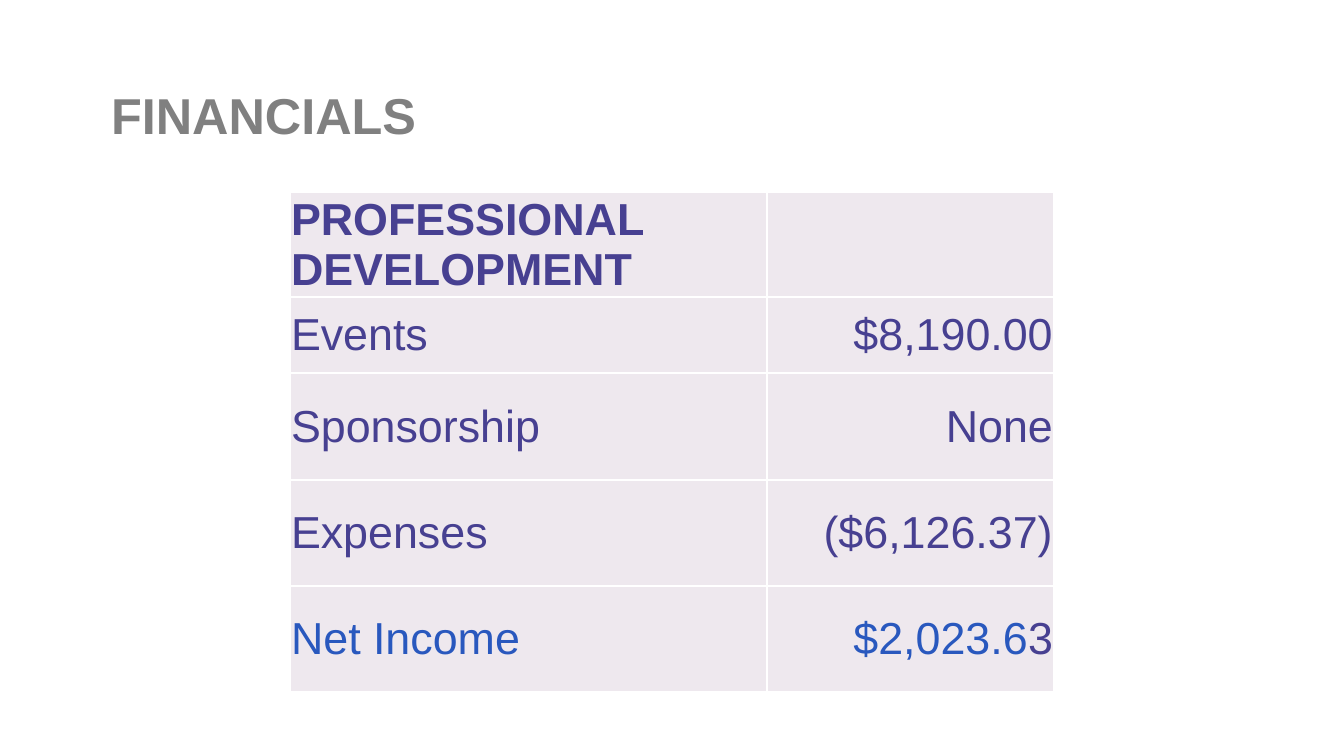
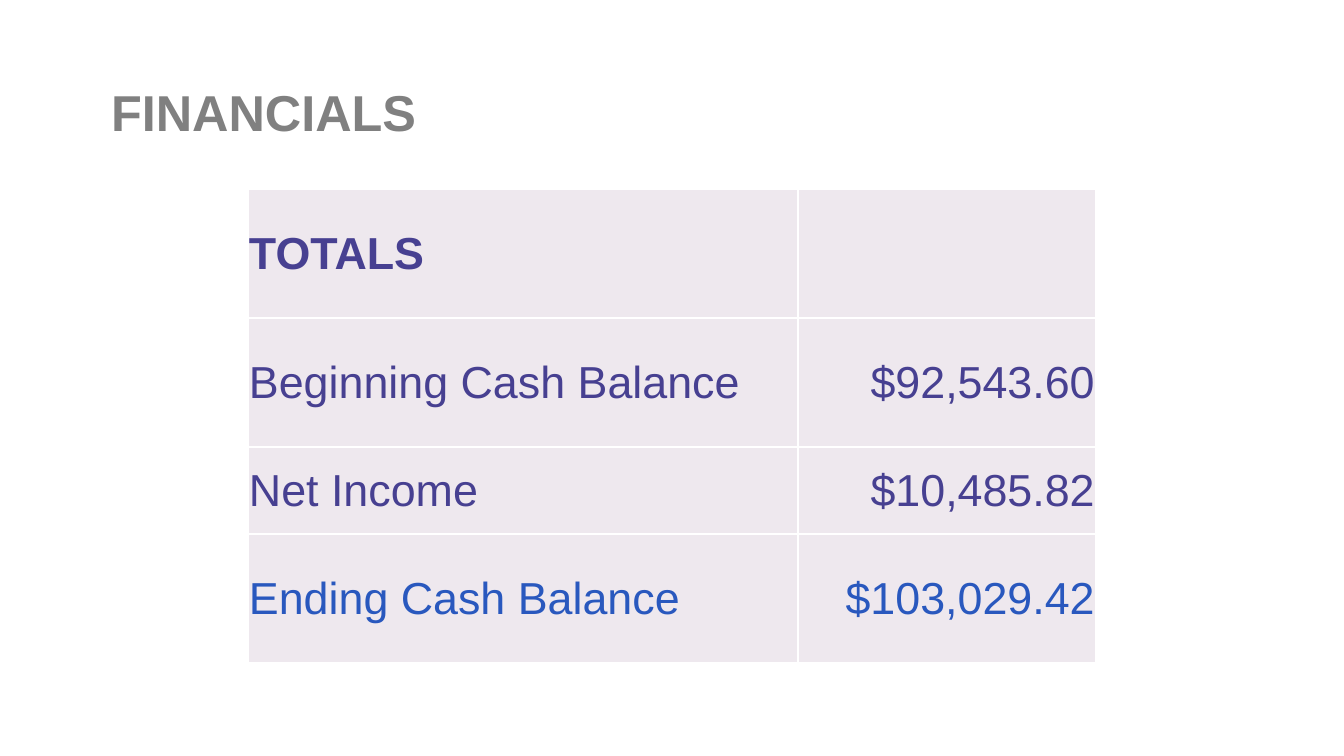
import pptx
import pptx.dml.color
import pptx.enum.text
import pptx.oxml
import pptx.oxml.ns
import pptx.util

# Shared scale, colours and font
PX = 914400 / 100.8
GREY, PLUM, BLUE = "808080", "474091", "2958BE"
PALE, WHITE = "EEE8EE", "FFFFFF"
FONT = "Arial"
ALIGN = pptx.enum.text.PP_ALIGN
MID = pptx.enum.text.MSO_ANCHOR.MIDDLE


def px(num):
    return pptx.util.Emu(round(num * PX))


def add_run(para, text, size, tint, bold=False):
    run = para.add_run()
    run.text = text
    run.font.name = FONT
    run.font.size = pptx.util.Pt(size)
    run.font.bold = bold
    run.font.color.rgb = pptx.dml.color.RGBColor.from_string(tint)


# What differs: title box, table corner, columns, and rows of
# (height, label, label colour, runs of the amount)
pages = [
    {
        "title": (101, 45, 492, 146),
        "corner": (290, 192),
        "cols": (477, 287),
        "rows": [
            (105, "PROFESSIONAL DEVELOPMENT", PLUM, []),
            (76, "Events", PLUM, [("$8,190.00", PLUM)]),
            (107, "Sponsorship", PLUM, [("None", PLUM)]),
            (106, "Expenses", PLUM, [("($6,126.37)", PLUM)]),
            (106, "Net Income", BLUE, [("$2,023.6", BLUE), ("3", PLUM)]),
        ],
    },
    {
        "title": (101, 42, 542, 146),
        "corner": (248, 189),
        "cols": (550, 298),
        "rows": [
            (129, "TOTALS", PLUM, []),
            (129, "Beginning Cash Balance", PLUM, [("$92,543.60", PLUM)]),
            (87, "Net Income", PLUM, [("$10,485.82", PLUM)]),
            (129, "Ending Cash Balance", BLUE, [("$103,029.42", BLUE)]),
        ],
    },
]

deck = pptx.Presentation()
deck.slide_width, deck.slide_height = px(1344), px(756)

for page in pages:
    slide = deck.slides.add_slide(deck.slide_layouts[5])

    # Title
    title = slide.shapes.title
    title.left, title.top, title.width, title.height = map(px, page["title"])
    frame = title.text_frame
    frame.word_wrap = True
    frame.auto_size = pptx.enum.text.MSO_AUTO_SIZE.NONE
    frame.vertical_anchor = MID
    para = frame.paragraphs[0]
    para.alignment = ALIGN.LEFT
    para.line_spacing = 0.9
    add_run(para, "FINANCIALS", 36, GREY, True)

    # Table grid
    rows, cols = page["rows"], page["cols"]
    left, top = page["corner"]
    high = sum(row[0] for row in rows)
    table = slide.shapes.add_table(
        len(rows), len(cols), px(left), px(top), px(sum(cols)), px(high)
    ).table
    table.first_row = table.horz_banding = False
    for col, wide in zip(table.columns, cols):
        col.width = px(wide)

    # Row text: bold head, amounts to the right
    for num, (tall, label, tint, amount) in enumerate(rows):
        table.rows[num].height = px(tall)
        for run in [(label, tint)]:
            add_run(table.cell(num, 0).text_frame.paragraphs[0], *run[:1], 32, run[1], num == 0)
        para = table.cell(num, 1).text_frame.paragraphs[0]
        para.alignment = ALIGN.RIGHT
        for text, shade in amount:
            add_run(para, text, 32, shade)

    # Cell insets, white borders and fill
    for cell in table.iter_cells():
        cell.vertical_anchor = MID
        cell.margin_left = cell.margin_right = cell.margin_top = px(1)
        cell.margin_bottom = 0
        props = cell._tc.get_or_add_tcPr()
        for side in "LRTB":
            props.append(pptx.oxml.parse_xml(
                f'<a:ln{side} {pptx.oxml.ns.nsdecls("a")} w="12700"><a:solidFill>'
                f'<a:srgbClr val="{WHITE}"/></a:solidFill></a:ln{side}>'
            ))
        cell.fill.solid()
        cell.fill.fore_color.rgb = pptx.dml.color.RGBColor.from_string(PALE)

deck.save("out.pptx")
